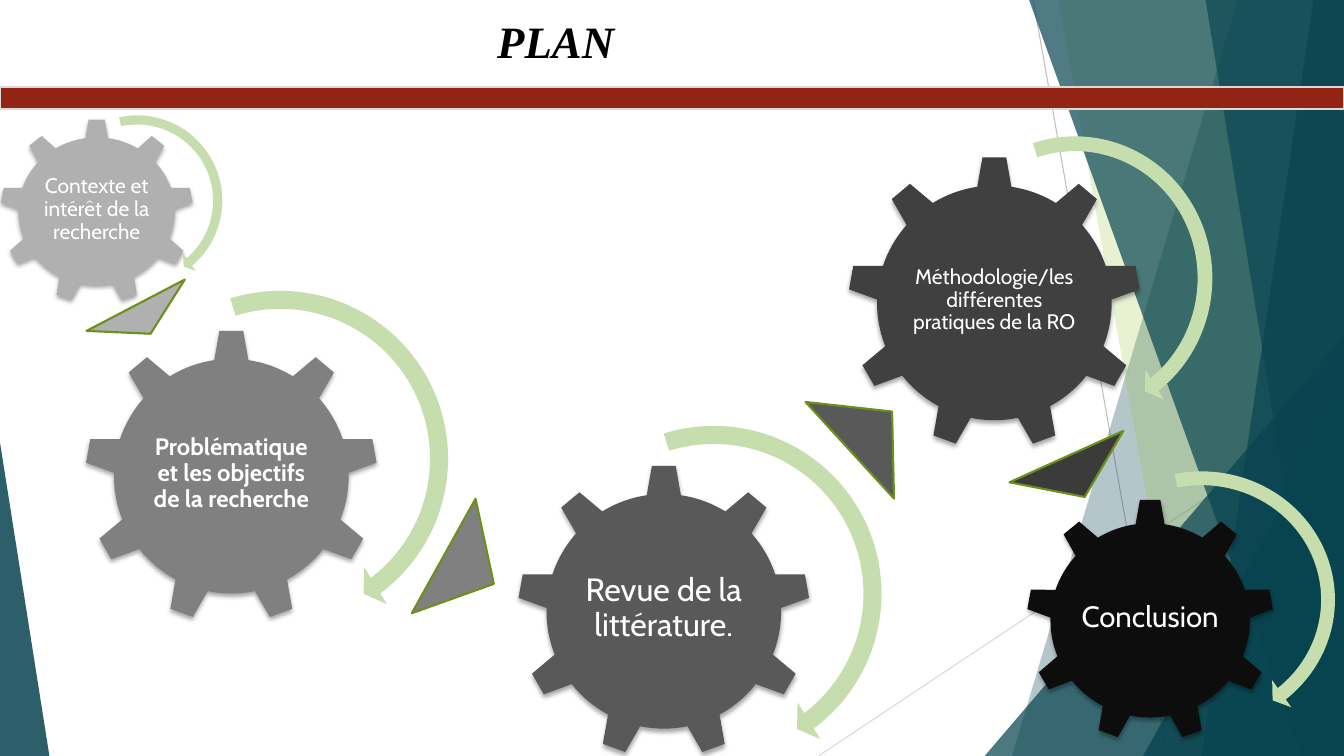
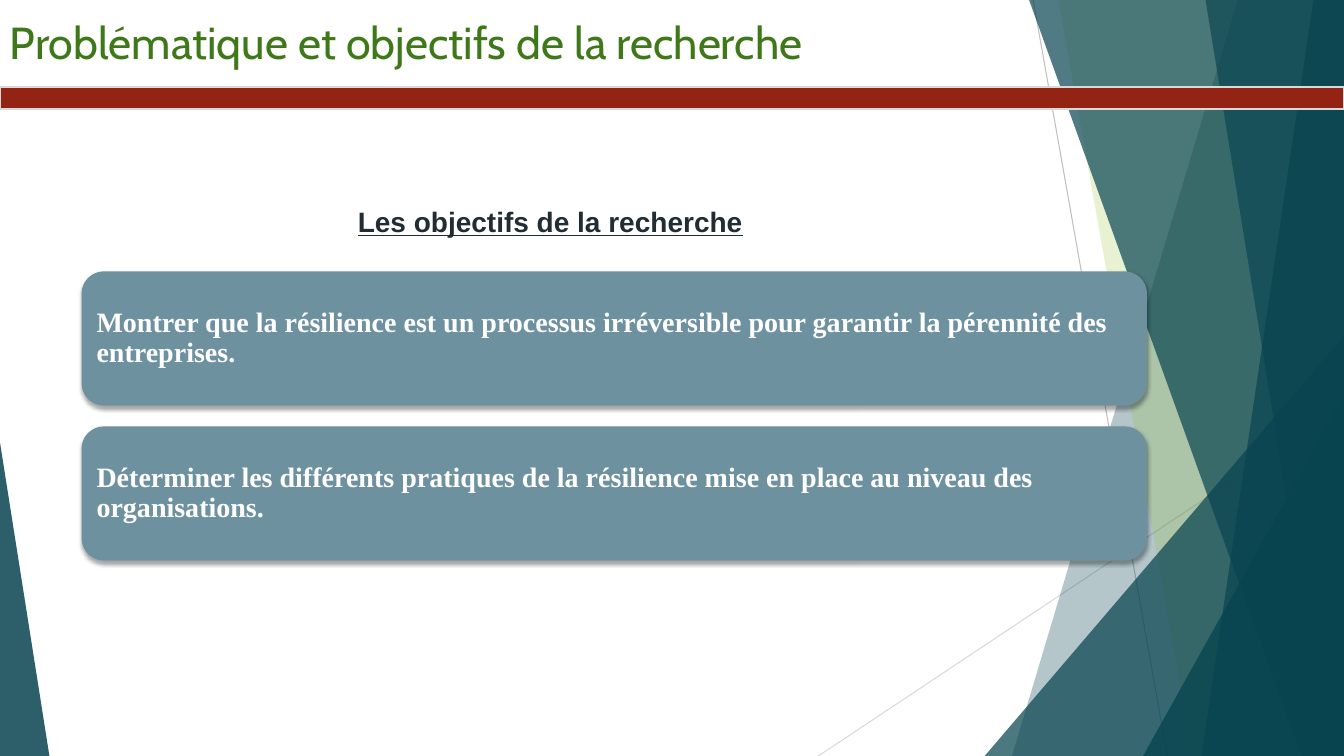
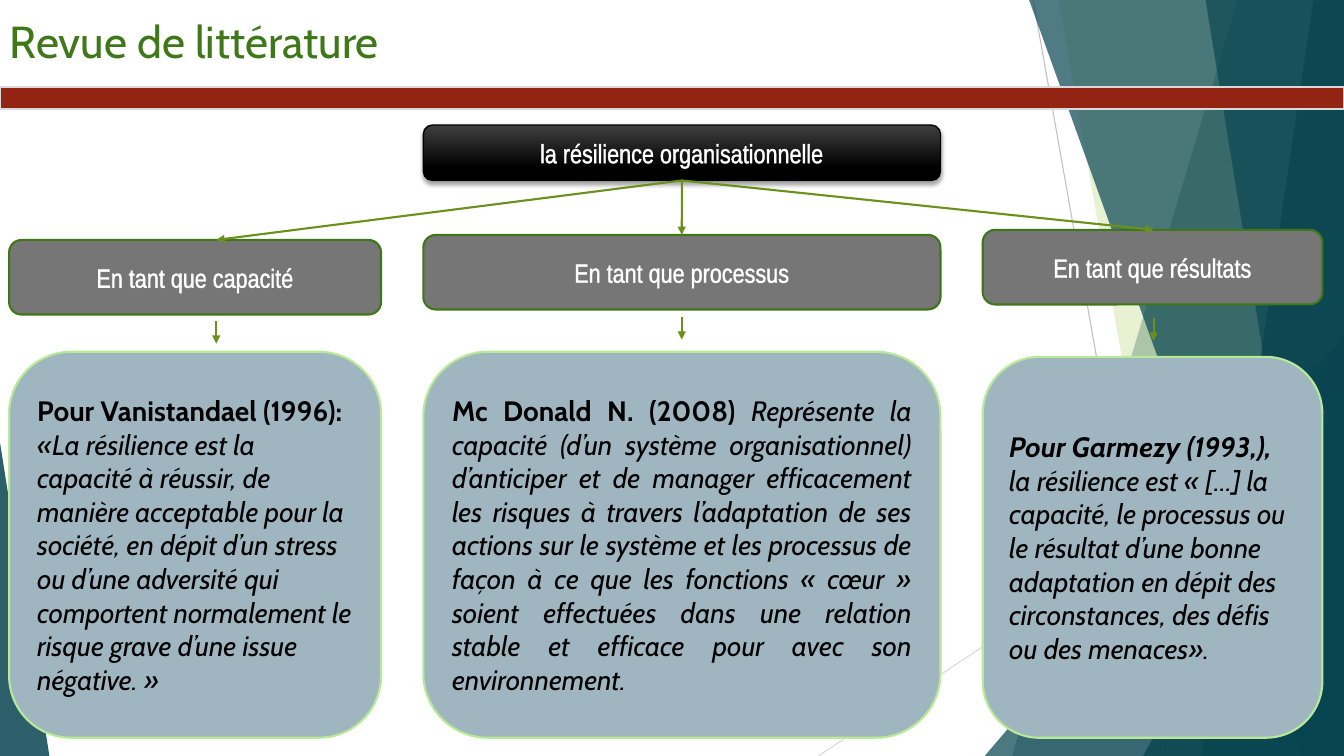
from dataclasses import dataclass

from lxml import etree
from pptx import Presentation
from pptx.dml.color import RGBColor
from pptx.enum.shapes import MSO_CONNECTOR, MSO_SHAPE
from pptx.enum.text import MSO_ANCHOR, PP_ALIGN
from pptx.oxml.ns import qn
from pptx.util import Pt

RECT, ROUND = MSO_SHAPE.RECTANGLE, MSO_SHAPE.ROUNDED_RECTANGLE
TRIANGLE, EXTRACT = MSO_SHAPE.ISOSCELES_TRIANGLE, MSO_SHAPE.FLOWCHART_EXTRACT
GEAR, ARC_ARROW = MSO_SHAPE.GEAR_9, MSO_SHAPE.CIRCULAR_ARROW
STRAIGHT = MSO_CONNECTOR.STRAIGHT
LEFT, CENTER, JUSTIFY = PP_ALIGN.LEFT, PP_ALIGN.CENTER, PP_ALIGN.JUSTIFY
TOP, MIDDLE = MSO_ANCHOR.TOP, MSO_ANCHOR.MIDDLE


@dataclass(frozen=True)
class Theme:
    width: float = 960
    height: float = 540
    sans: str = "Cabin"
    serif: str = "Times New Roman"
    plain: str = "Arial"
    narrow: str = "Arial Narrow"
    title_size: float = 32
    body_size: float = 20
    label_size: float = 18.8
    white: str = "FFFFFF"
    black: str = "000000"
    teal: str = "084450"
    lime: str = "90C226"
    title: str = "3F7819"
    band: str = "932313"
    rule: str = "D9D9D9"
    rule_dark: str = "BFBFBF"
    arc: str = "C6DDAD"
    arrow: str = "6B901C"
    goal: str = "6E91A0"
    heading: str = "212D32"
    root_top: str = "3F3F3F"
    label: str = "767676"
    label_edge: str = "3E7618"
    quote: str = "9FB6C0"
    quote_edge: str = "B7E996"


THEME = Theme()

# Content: backdrop, from back to front
BACK_LINES = [
    ((738, 0), (833.8, 540), THEME.rule_dark),
    ((960, 290.2), (584.6, 540), THEME.rule),
]
# A slant runs from top x to bottom x and fills to the right edge;
# a corner is a right triangle: left, top, width, apex position
FACETS = [
    ("slant", (884.2, 722.9), THEME.teal, 30),
    ("slant", (756, 851.8), THEME.lime, 20),
    ("corner", (703.4, 239.8, 256.6, 1), THEME.teal, 72),
    ("slant", (735.1, 929.5), THEME.teal, 70),
    ("slant", (938.2, 858.2), THEME.teal, 70),
    ("slant", (861.1, 949), THEME.teal, 65),
    ("corner", (816.5, 283, 143.5, 1), THEME.teal, 80),
    ("corner", (0, 316.1, 35.3, 0), THEME.teal, 85),
]

# Content: plan
WIDE_SWEEP, TIGHT_SWEEP = (31.88, 151.6), (29.7, 154.75)
# text, size, bold, inset, fill, gear box, arrow box, arrow sweep
GEARS = [
    ("Problématique et les objectifs de la recherche", 17, True, 1.6, "808080",
     (60.5, 235.4, 209.5, 209.5), (71.3, 198.7, 257.8, 257.8), WIDE_SWEEP),
    ("Revue de la littérature.", 23, False, 2.2, "595959",
     (369.4, 331.9, 209.5, 209.5), (380.9, 295.2, 257.8, 257.8), WIDE_SWEEP),
    ("Méthodologie/les différentes pratiques de la RO", 15, False, 1.5, "404040",
     (605.5, 111.6, 209.5, 209.5), (662.4, 90, 211, 217.4), WIDE_SWEEP),
    ("Contexte et intérêt de la recherche", 15, False, 1.5, "B0B0B0",
     (0, 85, 138.2, 131.8), (32.4, 77.8, 131, 131), TIGHT_SWEEP),
    ("Conclusion", 21, False, 2.1, "0D0D0D",
     (733, 356.4, 177.1, 173.5), (756, 329.8, 204.5, 197.3), TIGHT_SWEEP),
]
# box, rotation, fill
POINTERS = [
    ((288, 386.6, 93.6, 41), 119.1, "808080"),
    ((575.3, 287.3, 93.6, 41), 47.5, "595959"),
    ((62.6, 216.7, 79.2, 23), 152.4, "B0B0B0"),
    ((723.6, 324.7, 89.3, 31.7), 155.7, "3B3B3B"),
]

# Content: objectives
GOALS_HEADING = "Les objectifs de la recherche"
GOALS = [
    "Montrer que la résilience est un processus irréversible pour garantir "
    "la pérennité des entreprises.",
    "Déterminer les différents pratiques de la résilience mise en place "
    "au niveau des organisations.",
]

# Content: literature review
ROOT = "la résilience organisationnelle"
COLUMNS = [
    dict(label="En tant que capacité", left=6.5, width=265.7, label_top=171.4,
         axis=154.5, arrow_top=229, quote_top=251.3, align=LEFT,
         author="Pour Vanistandael (1996): ", author_italic=False,
         quote="«La résilience est la capacité à réussir, de manière acceptable "
               "pour la société, en dépit d’un stress ou d’une adversité qui "
               "comportent normalement le risque grave d’une issue négative. »"),
    dict(label="En tant que processus", left=302.4, width=369.4, label_top=167.8,
         axis=487, arrow_top=226.1, quote_top=251.3, align=JUSTIFY,
         author="Mc Donald N. (2008) ", author_italic=False,
         quote="Représente la capacité (d’un système organisationnel) d’anticiper "
               "et de manager efficacement les risques à travers l’adaptation de "
               "ses actions sur le système et les processus de façon à ce que les "
               "fonctions « cœur » soient effectuées dans une relation stable et "
               "efficace pour avec son environnement."),
    dict(label="En tant que résultats", left=702, width=242.6, label_top=164.2,
         axis=824, arrow_top=226.8, quote_top=254.9, align=LEFT,
         author="Pour Garmezy (1993,), ", author_italic=True,
         quote="la résilience est « […] la capacité, le processus ou le résultat "
               "d’une bonne adaptation en dépit des circonstances, des défis ou "
               "des menaces»."),
]
ROOT_BOX = (302.4, 89.3, 369.4, 39.6)
LABEL_HEIGHT, QUOTE_BOTTOM, ARROW_LENGTH = 53.3, 527, 16.5


# Drawing helpers
def add_xml(parent, tag, **attributes):
    return etree.SubElement(parent, qn(tag), attributes)


def paint(shape, fill, edge=None, edge_width=1.5, alpha=None, shadow=False):
    shape.shadow.inherit = False
    shape.fill.solid()
    shape.fill.fore_color.rgb = RGBColor.from_string(fill)
    if alpha is not None:
        color = shape.element.xpath("./p:spPr/a:solidFill/a:srgbClr")[0]
        add_xml(color, "a:alpha", val=str(alpha * 1000))
    if edge:
        shape.line.color.rgb = RGBColor.from_string(edge)
        shape.line.width = Pt(edge_width)
    else:
        shape.line.fill.background()
    if shadow:
        effects = shape.element.xpath("./p:spPr/a:effectLst")[0]
        outer = add_xml(effects, "a:outerShdw", blurRad=str(Pt(3)), dist=str(Pt(2)),
                        dir="5400000", algn="ctr", rotWithShape="0")
        color = add_xml(outer, "a:srgbClr", val=THEME.black)
        add_xml(color, "a:alpha", val="35000")


def add_box(page, kind, box, fill, **style):
    shape = page.shapes.add_shape(kind, *map(Pt, box))
    paint(shape, fill, **style)
    return shape


def add_line(page, start, end, color, width, arrow=False):
    connector = page.shapes.add_connector(STRAIGHT, *map(Pt, (*start, *end)))
    connector.line.color.rgb = RGBColor.from_string(color)
    connector.line.width = Pt(width)
    if arrow:
        stroke = connector.element.xpath("./p:spPr/a:ln")[0]
        add_xml(stroke, "a:tailEnd", type="triangle")
    add_xml(connector.element.spPr, "a:effectLst")


def write(shape, spans, size, color, font=THEME.sans, align=LEFT, anchor=MIDDLE,
          inset=None, spacing=None, bold=None, italic=None, underline=None):
    """Fill a shape with one paragraph; spans are (text, bold, italic) or a string."""
    frame = shape.text_frame
    frame.word_wrap = True
    frame.vertical_anchor = anchor
    if inset is not None:
        frame.margin_left = frame.margin_right = Pt(inset)
        frame.margin_top = frame.margin_bottom = Pt(inset)
    para = frame.paragraphs[0]
    para.alignment = align
    if spacing:
        para.line_spacing = spacing
    para.font.name, para.font.size = font, Pt(size)
    para.font.color.rgb = RGBColor.from_string(color)
    para.font.bold, para.font.italic, para.font.underline = bold, italic, underline
    if isinstance(spans, str):
        spans = [(spans, None, None)]
    for text, span_bold, span_italic in spans:
        span = para.add_run()
        span.text = text
        if span_bold is not None:
            span.font.bold, span.font.italic = span_bold, span_italic


def add_text(page, box, text, size, color, **style):
    shape = page.shapes.add_textbox(*map(Pt, box))
    write(shape, text, size, color, anchor=TOP, **style)


def write_label(shape, text):
    write(shape, text, THEME.label_size, THEME.white, font=THEME.narrow, align=CENTER)
    outline = etree.Element(qn("a:ln"), w=str(Pt(1.45)))
    add_xml(add_xml(outline, "a:solidFill"), "a:srgbClr", val=THEME.white)
    run = shape.element.xpath(".//a:r")[0]
    run.get_or_add_rPr().insert(0, outline)


# Shared backdrop, band and title
def add_page(deck, title, box, color=THEME.title, **style):
    page = deck.slides.add_slide(deck.slide_layouts[6])
    for start, end, line_color in BACK_LINES:
        add_line(page, start, end, line_color, 0.75)
    for kind, place, fill, alpha in FACETS:
        if kind == "slant":
            top_x, bottom_x = place
            builder = page.shapes.build_freeform(Pt(top_x), 0)
            builder.add_line_segments(
                [(Pt(x), Pt(y)) for x, y in ((THEME.width, 0),
                                             (THEME.width, THEME.height),
                                             (bottom_x, THEME.height))])
            facet = builder.convert_to_shape()
            paint(facet, fill, alpha=alpha)
        else:
            left, top, width, apex = place
            facet = add_box(page, TRIANGLE, (left, top, width, THEME.height - top),
                            fill, alpha=alpha)
            facet.adjustments[0] = apex
    add_box(page, RECT, (0, 61.9, THEME.width, 15.8), THEME.band, edge=THEME.rule)
    add_text(page, box, title, THEME.title_size, color, **style)
    return page


# Slides
def build_plan(deck):
    page = add_page(deck, "PLAN", (41, 6.5, 712, 46), THEME.black,
                    font=THEME.serif, align=CENTER, bold=True, italic=True)
    for text, size, bold, inset, fill, gear_box, arrow_box, sweep in GEARS:
        gear = add_box(page, GEAR, gear_box, fill, shadow=True)
        write(gear, text, size, THEME.white, align=CENTER, inset=inset,
              spacing=0.9, bold=bold)
        arrow = add_box(page, ARC_ARROW, arrow_box, THEME.arc)
        for index, value in enumerate((0.05, 3.13, *sweep, 0.06)):
            arrow.adjustments[index] = value
    for box, rotation, fill in POINTERS:
        pointer = add_box(page, EXTRACT, box, fill, edge=THEME.arrow)
        pointer.rotation = rotation


def build_goals(deck):
    page = add_page(deck, "Problématique et objectifs de la recherche",
                    (0, 7.2, 734, 46))
    top, height, gap = 193.9, 95.8, 14.9
    for index, goal in enumerate(GOALS):
        box = (58.3, top + index * (height + gap), 761, height)
        card = add_box(page, ROUND, box, THEME.goal, shadow=True)
        write(card, goal, THEME.body_size, THEME.white, font=THEME.serif,
              inset=6, spacing=0.9, bold=True)
    add_text(page, (173.5, 142.6, 439.2, 55.4), GOALS_HEADING, THEME.body_size,
             THEME.heading, font=THEME.plain, align=CENTER, bold=True, underline=True)


def build_review(deck):
    page = add_page(deck, "Revue de littérature", (0, 6.5, 523.4, 46))
    root = add_box(page, ROUND, ROOT_BOX, THEME.black, edge=THEME.black,
                   edge_width=1, shadow=True)
    root.fill.gradient()
    root.fill.gradient_angle = 270
    stops = ((0, THEME.root_top), (0.78, THEME.black))
    for stop, (position, color) in zip(root.fill.gradient_stops, stops):
        stop.position = position
        stop.color.rgb = RGBColor.from_string(color)
    write_label(root, ROOT)

    left, top, width, height = ROOT_BOX
    root_foot = (left + width / 2, top + height)
    for column in COLUMNS:
        left, width, axis = column["left"], column["width"], column["axis"]
        label_top, quote_top = column["label_top"], column["quote_top"]
        arrow_top = column["arrow_top"]
        label = add_box(page, ROUND, (left, label_top, width, LABEL_HEIGHT),
                        THEME.label, edge=THEME.label_edge)
        write_label(label, column["label"])
        quote = add_box(page, ROUND, (left, quote_top, width, QUOTE_BOTTOM - quote_top),
                        THEME.quote, edge=THEME.quote_edge)
        write(quote, [(column["author"], True, column["author_italic"]),
                      (column["quote"], False, True)],
              THEME.body_size, THEME.black, align=column["align"])
        for start, end in ((root_foot, (axis, label_top)),
                           ((axis, arrow_top), (axis, arrow_top + ARROW_LENGTH))):
            add_line(page, start, end, THEME.arrow, 1.5, arrow=True)


def main():
    deck = Presentation()
    deck.slide_width, deck.slide_height = Pt(THEME.width), Pt(THEME.height)
    build_plan(deck)
    build_goals(deck)
    build_review(deck)
    deck.save("out.pptx")


if __name__ == "__main__":
    main()
